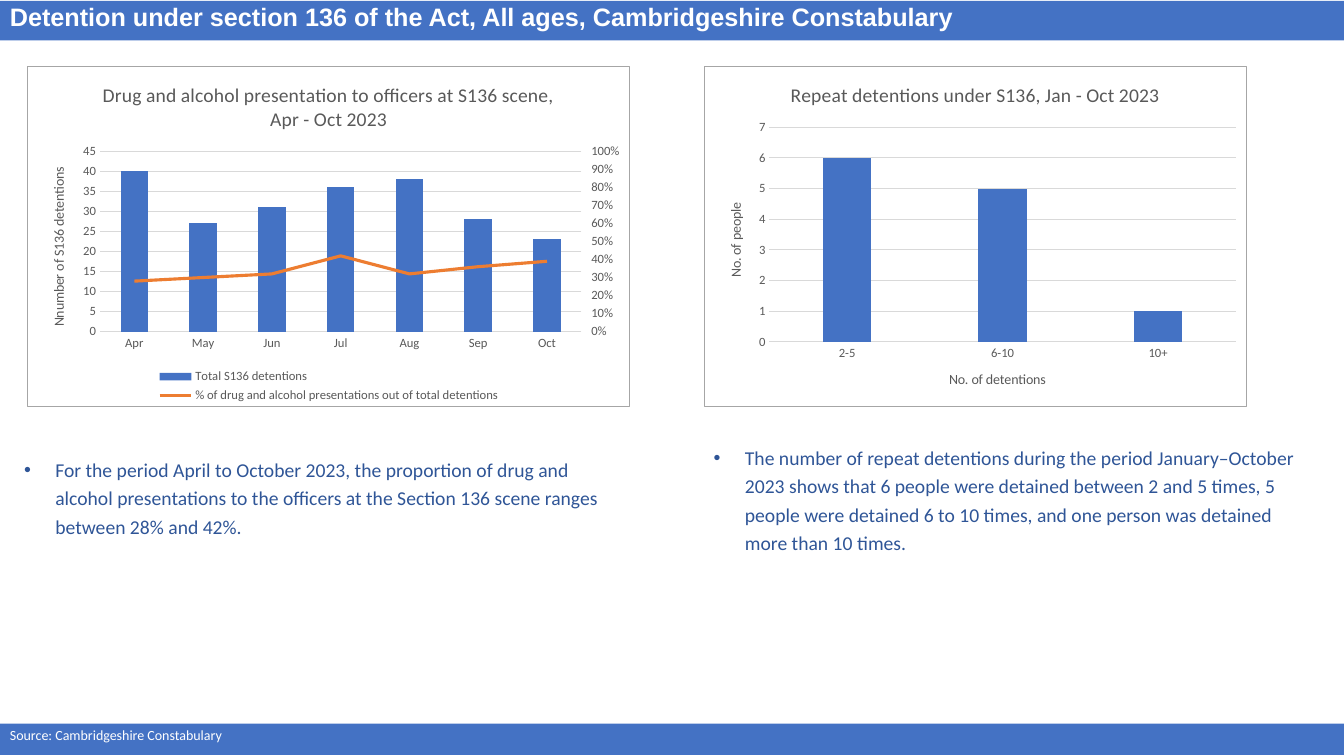
"""Build the slide on section 136 detentions."""
import pptx
import pptx.chart.data
import pptx.dml.color
import pptx.enum.chart
import pptx.enum.shapes
import pptx.enum.text
import pptx.oxml
import pptx.util

PX = 9144
BLUE, ORANGE, NAVY = "4472C4", "ED7D31", "2F5597"
WHITE, GREY, PALE, EDGE = "FFFFFF", "595959", "D9D9D9", "A6A6A6"
SPACE = ('xmlns:c="http://schemas.openxmlformats.org/drawingml/2006/chart" '
         'xmlns:a="http://schemas.openxmlformats.org/drawingml/2006/main"')


def color(code):
    """Return the colour for a hex string."""
    return pptx.dml.color.RGBColor.from_string(code)


def px(*sizes):
    """Turn pixel lengths into EMU."""
    return [size * PX for size in sizes]


def node(tag, body="", attrs=""):
    """Make one XML element."""
    return pptx.oxml.parse_xml(f"<{tag} {SPACE} {attrs}>{body}</{tag}>")


def style(font, size, code, bold=False, face="Calibri"):
    """Set the look of a font."""
    font.size, font.bold, font.name = pptx.util.Pt(size), bold, face
    font.color.rgb = color(code)


def bar(slide, *box):
    """Draw a plain blue band."""
    kind = pptx.enum.shapes.MSO_SHAPE.RECTANGLE
    shape = slide.shapes.add_shape(kind, *px(*box))
    shape.shadow.inherit = False
    shape.fill.solid()
    shape.fill.fore_color.rgb = color(BLUE)
    shape.line.fill.background()


def write(slide, text, box, size, code, bold=False, face="Calibri",
          gap=1.0, bullet=False, middle=False):
    """Add a text box with one paragraph."""
    frame = slide.shapes.add_textbox(*px(*box)).text_frame
    frame.word_wrap = True
    anchor = pptx.enum.text.MSO_ANCHOR
    frame.vertical_anchor = anchor.MIDDLE if middle else anchor.TOP
    para = frame.paragraphs[0]
    para.line_spacing = gap
    run = para.add_run()
    run.text = text
    style(run.font, size, code, bold, face)
    if bullet:
        props = para._p.get_or_add_pPr()
        indent = 31 * PX
        props.set("marL", str(indent))
        props.set("indent", str(-indent))
        props.append(node("a:buFont", attrs='typeface="Arial"'))
        props.append(node("a:buChar", attrs='char="•"'))


def label(owner, text, size):
    """Give a chart or an axis its title."""
    owner.has_title = True
    title = owner.chart_title if hasattr(owner, "chart_title") else owner.axis_title
    title.text_frame.text = text
    style(title.text_frame.paragraphs[0].runs[0].font, size, GREY)


def rule(line, code, width=0.75):
    """Set the colour and width of a line."""
    line.color.rgb = color(code)
    line.width = pptx.util.Pt(width)


def place(chart, *parts):
    """Fix the inner plot area as shares of the chart."""
    area = chart.element.xpath("c:chart/c:plotArea")[0]
    for old in area.xpath("c:layout"):
        area.remove(old)
    body = '<c:layoutTarget val="inner"/><c:xMode val="edge"/><c:yMode val="edge"/>'
    body += "".join(f'<c:{key} val="{part}"/>' for key, part in zip("xywh", parts))
    area.insert(0, node("c:layout", f"<c:manualLayout>{body}</c:manualLayout>"))


def graph(slide, box, title, cats, rows, ytitle, top, step, gap, lap=0):
    """Add a column chart with a thin frame."""
    data = pptx.chart.data.CategoryChartData()
    data.categories = cats
    for name, vals in rows:
        data.add_series(name, vals)
    kind = pptx.enum.chart.XL_CHART_TYPE.COLUMN_CLUSTERED
    chart = slide.shapes.add_chart(kind, *px(*box), data).chart
    style(chart.font, 9, GREY)
    label(chart, title, 14)
    chart.has_legend = False
    plot = chart.plots[0]
    plot.vary_by_categories = False
    plot.gap_width, plot.overlap = gap, lap
    fill = plot.series[0].format.fill
    fill.solid()
    fill.fore_color.rgb = color(BLUE)
    for axis in (chart.category_axis, chart.value_axis):
        axis.major_tick_mark = pptx.enum.chart.XL_TICK_MARK.NONE
        style(axis.tick_labels.font, 9, GREY)
    rule(chart.category_axis.format.line, PALE)
    axis = chart.value_axis
    axis.format.line.fill.background()
    rule(axis.major_gridlines.format.line, PALE)
    axis.minimum_scale, axis.maximum_scale, axis.major_unit = 0, top, step
    label(axis, ytitle, 10)
    paint = '<a:solidFill><a:srgbClr val="{}"/></a:solidFill>'
    frame = (paint.format(WHITE)
             + f'<a:ln w="9525">{paint.format(EDGE)}</a:ln>')
    chart.element.xpath("c:chart")[0].addnext(node("c:spPr", frame))
    return chart


def share(chart):
    """Move the second series to a line on a right-hand percent axis."""
    area = chart.element.xpath("c:chart/c:plotArea")[0]
    bars = area.xpath("c:barChart")[0]
    row = bars.xpath("c:ser")[1]
    for old in row.xpath("c:invertIfNegative"):
        row.remove(old)
    line = node("c:lineChart", '<c:grouping val="standard"/><c:varyColors val="0"/>'
                '<c:marker val="1"/><c:axId val="501"/><c:axId val="502"/>')
    line.insert(2, row)
    bars.addnext(line)
    ends = '<c:scaling><c:orientation val="minMax"/>{}</c:scaling>'
    ticks = ('<c:majorTickMark val="{}"/><c:minorTickMark val="none"/>'
             '<c:tickLblPos val="nextTo"/>')
    cat = ('<c:axId val="501"/>' + ends.format("")
           + '<c:delete val="1"/><c:axPos val="b"/>' + ticks.format("none")
           + '<c:crossAx val="502"/><c:crosses val="autoZero"/>')
    val = ('<c:axId val="502"/>'
           + ends.format('<c:max val="1"/><c:min val="0"/>')
           + '<c:delete val="0"/><c:axPos val="r"/>'
           '<c:numFmt formatCode="0%" sourceLinked="0"/>' + ticks.format("out")
           + '<c:spPr><a:ln><a:noFill/></a:ln></c:spPr>'
           '<c:crossAx val="501"/><c:crosses val="max"/>'
           '<c:crossBetween val="between"/><c:majorUnit val="0.1"/>')
    last = area.xpath("c:valAx")[-1]
    last.addnext(node("c:catAx", cat))
    last.addnext(node("c:valAx", val))
    trend = chart.plots[1].series[0]
    trend.smooth = False
    trend.marker.style = pptx.enum.chart.XL_MARKER_STYLE.NONE
    rule(trend.format.line, ORANGE, 2.25)


def main():
    """Build and save the slide."""
    deck = pptx.Presentation()
    deck.slide_width, deck.slide_height = px(1333, 750)
    slide = deck.slides.add_slide(deck.slide_layouts[6])
    bar(slide, 0, 1, 1333, 39)
    bar(slide, 0, 718, 1333, 31)
    write(slide, "Detention under section 136 of the Act, All ages, "
          "Cambridgeshire Constabulary", (0, 0, 1333, 37), 18, WHITE,
          bold=True, face="Arial", gap=0.9, middle=True)
    write(slide, "Source: Cambridgeshire Constabulary",
          (0, 716, 1333, 27), 10, WHITE)

    repeat = graph(slide, (698, 65, 539, 339),
                   "Repeat detentions under S136, Jan - Oct 2023",
                   ["2-5", "6-10", "10+"], [("Series 1", [6, 5, 1])],
                   "No. of people", 7, 1, 219, -27)
    label(repeat.category_axis, "No. of detentions", 10)
    place(repeat, 0.12, 0.18, 0.86, 0.63)

    drug = graph(slide, (27, 65, 598, 339),
                 "Drug and alcohol presentation to officers at S136 scene, "
                 "Apr - Oct 2023",
                 ["Apr", "May", "Jun", "Jul", "Aug", "Sep", "Oct"],
                 [("Total S136 detentions", [40, 27, 31, 36, 38, 28, 23]),
                  ("% of drug and alcohol presentations out of total detentions",
                   [0.28, 0.3, 0.32, 0.42, 0.32, 0.36, 0.39])],
                 "Nnumber of S136 detentions", 45, 5, 150)
    share(drug)
    place(drug, 0.12, 0.25, 0.8, 0.53)
    drug.has_legend = True
    drug.legend.position = pptx.enum.chart.XL_LEGEND_POSITION.BOTTOM
    drug.legend.include_in_layout = False
    style(drug.legend.font, 9, GREY)

    notes = [
        (14, 445, "For the period April to October 2023, the proportion of drug "
         "and alcohol presentations to the officers at the Section 136 scene "
         "ranges between 28% and 42%."),
        (698, 433, "The number of repeat detentions during the period "
         "January–October 2023 shows that 6 people were detained between 2 and "
         "5 times, 5 people were detained 6 to 10 times, and one person was "
         "detained more than 10 times."),
    ]
    for left, top, text in notes:
        write(slide, text, (left, top, 611, 170), 14, NAVY, gap=1.2, bullet=True)
    deck.save("out.pptx")


if __name__ == "__main__":
    main()
